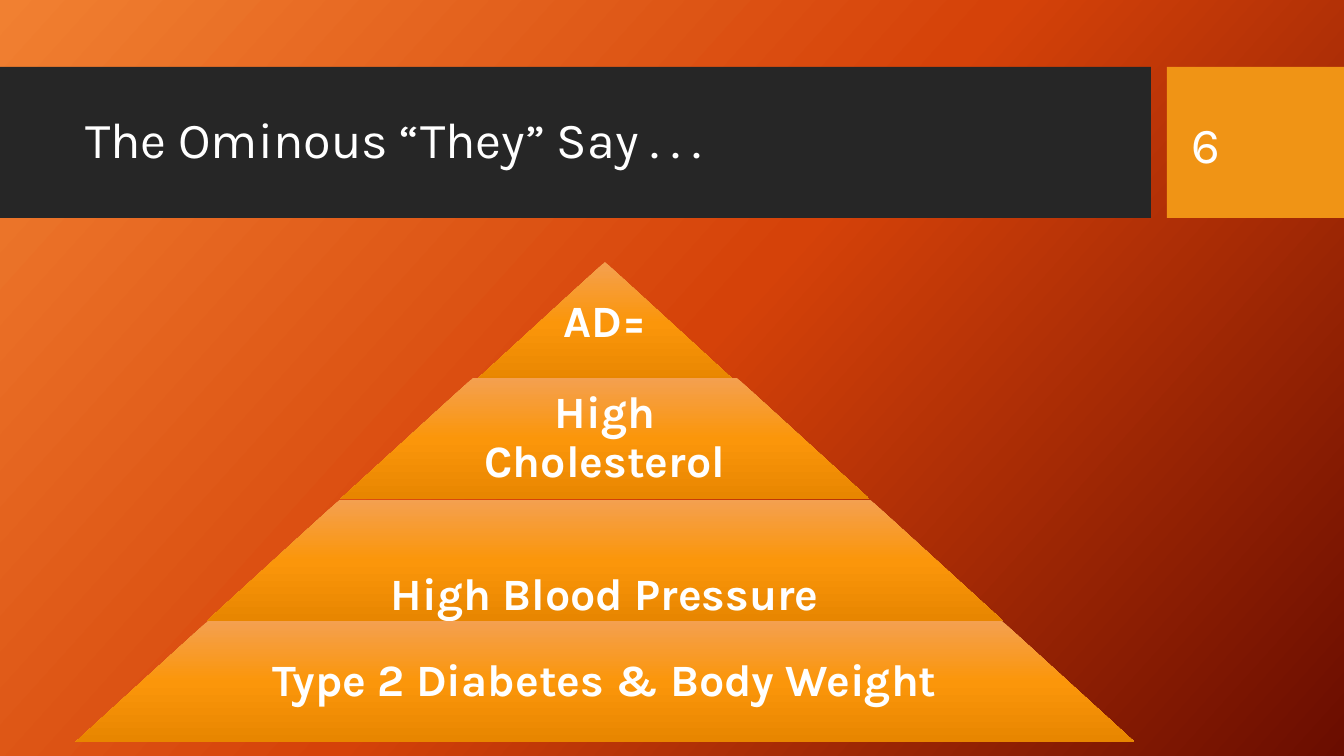
import pptx
import pptx.util
import pptx.dml.color
import pptx.enum.shapes
import pptx.enum.text
import pptx.oxml.ns
import lxml.etree

PX = 914400 / 100.8
FONT = "Karla"
COLORS = {
    "band": "262626",
    "number": "F09415",
    "text": "FFFFFF",
    "background": ["F18031", "D54209", "6A0D00"],
    "tier": ["F4A050", "FB960A", "E88600"],
}
SHAPES = pptx.enum.shapes.MSO_SHAPE
ALIGN = pptx.enum.text.PP_ALIGN
qn = pptx.oxml.ns.qn


def set_gradient(fill, element, colors, angle):
    fill.gradient()
    fill.gradient_angle = 360 - angle
    stops = element.find(".//" + qn("a:gsLst"))
    stops.clear()
    for i, color in enumerate(colors):
        gs = lxml.etree.SubElement(stops, qn("a:gs"), pos=str(i * 50000))
        lxml.etree.SubElement(gs, qn("a:srgbClr"), val=color)


def set_text(sp, text, size, align, spacing, bold=False):
    tf = sp.text_frame
    tf.word_wrap = True
    tf.auto_size = pptx.enum.text.MSO_AUTO_SIZE.NONE
    tf.vertical_anchor = pptx.enum.text.MSO_ANCHOR.MIDDLE
    p = tf.paragraphs[0]
    p.text = text
    p.alignment = align
    p.line_spacing = spacing
    p.font.name = FONT
    p.font.size = pptx.util.Pt(size)
    p.font.bold = bold
    p.font.color.rgb = pptx.dml.color.RGBColor.from_string(COLORS["text"])
    return tf


prs = pptx.Presentation()
prs.slide_width = round(1344 * PX)
prs.slide_height = round(756 * PX)
s = prs.slides.add_slide(prs.slide_layouts[5])
set_gradient(s.background.fill, s.element, COLORS["background"], 42)

for name, left, width in [("band", 0, 1151), ("number", 1167, 177)]:
    sp = s.shapes.add_shape(SHAPES.RECTANGLE, *[round(v * PX) for v in (left, 67, width, 151)])
    sp.shadow.inherit = False
    sp.fill.solid()
    sp.fill.fore_color.rgb = pptx.dml.color.RGBColor.from_string(COLORS[name])
    sp.line.fill.background()

title = s.shapes.title
title.left, title.top, title.width, title.height = [round(v * PX) for v in (75, 83, 1059, 119)]
set_text(title, "The Ominous “They” Say . . .", 36, ALIGN.LEFT, 0.9)
title.element.getparent().append(title.element)

number = s.shapes.add_textbox(*[round(v * PX) for v in (1182, 83, 127, 120)])
set_text(number, "6", 36, ALIGN.LEFT, 1.0)

CENTER = 605
TIER_HEIGHT = 121
tiers = [
    ("AD=", 262, 264, 264, 4),
    ("High Cholesterol", 378, 529, 343, 4),
    ("High Blood Pressure", 500, 796, 517, 74),
    ("Type 2 Diabetes & Body Weight", 621, 1059, 688, 4),
]
for text, top, width, text_width, inset_top in tiers:
    sp = s.shapes.add_shape(
        SHAPES.TRAPEZOID,
        *[round(v * PX) for v in (CENTER - width / 2, top, width, TIER_HEIGHT)])
    sp.adjustments[0] = 1.095
    sp.shadow.inherit = False
    set_gradient(sp.fill, sp.element, COLORS["tier"], 90)
    sp.line.fill.background()

    label = s.shapes.add_textbox(
        *[round(v * PX) for v in (CENTER - text_width / 2, top, text_width, TIER_HEIGHT)])
    tf = set_text(label, text, 32, ALIGN.CENTER, 0.9, True)
    tf.margin_left = tf.margin_right = tf.margin_bottom = round(4 * PX)
    tf.margin_top = round(inset_top * PX)

prs.save("out.pptx")
